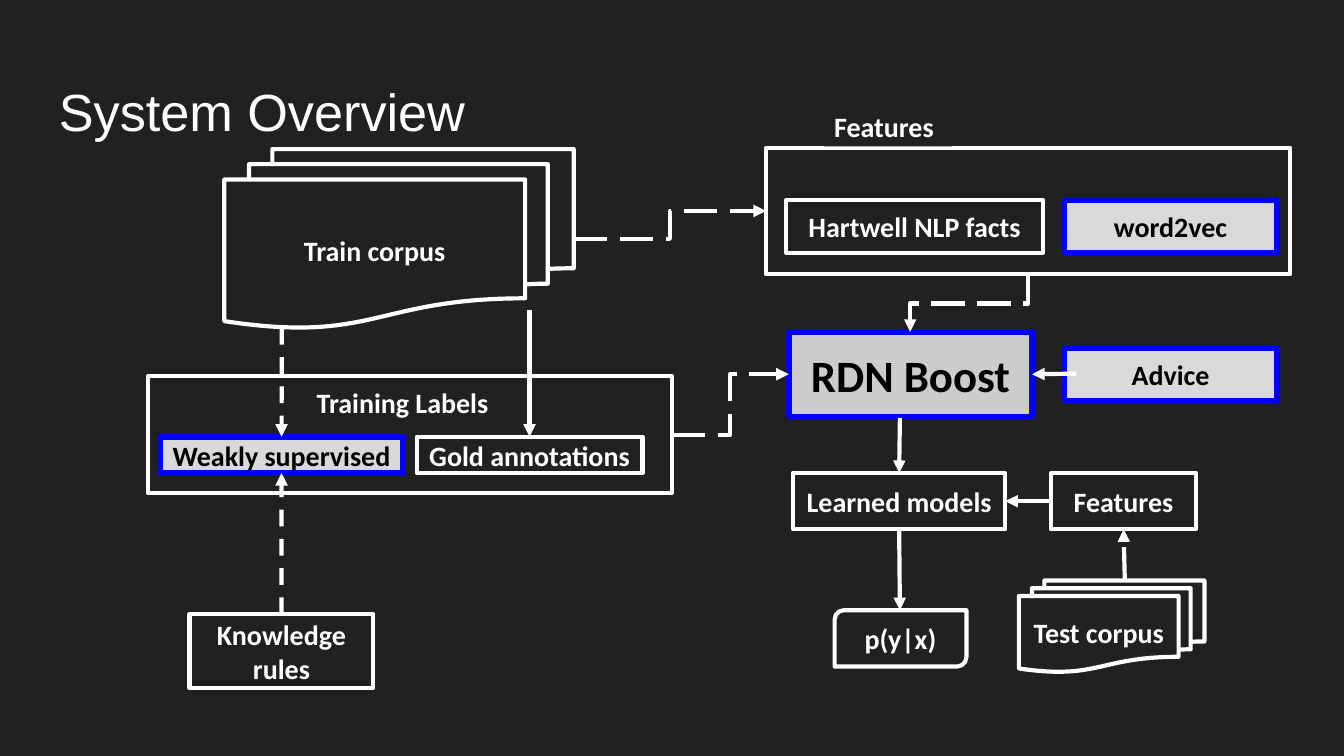
from dataclasses import dataclass

from lxml import etree
from pptx import Presentation
from pptx import util as u
from pptx.dml.color import RGBColor
from pptx.enum import dml, shapes, text
from pptx.oxml.ns import qn

TOP, LEFT, BOTTOM, RIGHT = range(4)
DASH = dml.MSO_LINE.DASH
LONG = dml.MSO_LINE.LONG_DASH
SHAPE = shapes.MSO_SHAPE
ALIGN = text.PP_ALIGN


@dataclass(frozen=True)
class Theme:
    back: str = "212121"
    white: str = "FFFFFF"
    black: str = "000000"
    blue: str = "0000FF"
    light: str = "D9D9D9"
    grey: str = "CCCCCC"
    body: str = "Calibri"
    head: str = "Arial"
    title_size: float = 28
    big_size: float = 24
    size: float = 15
    thin: float = 2.25
    thick: float = 3


class Diagram:
    def __init__(self, theme, width, height):
        self.t = theme
        self.prs = Presentation()
        self.prs.slide_width, self.prs.slide_height = u.Pt(width), u.Pt(height)
        self.s = self.prs.slides.add_slide(self.prs.slide_layouts[6])
        self.paint(self.s.background.fill, theme.back)

    def paint(self, fill, color):
        fill.solid()
        fill.fore_color.rgb = RGBColor.from_string(color)

    def add_text(self, sp, words, insets, anchor, align, color, **font):
        tf = sp.text_frame
        dx, dy = (u.Pt(v) for v in insets)
        frame = dict(word_wrap=True, vertical_anchor=anchor, margin_left=dx,
                     margin_right=dx, margin_top=dy, margin_bottom=dy)
        for name, value in frame.items():
            setattr(tf, name, value)
        p = tf.paragraphs[0]
        p.alignment = align
        r = p.add_run()
        r.text = words
        for name, value in font.items():
            setattr(r.font, name, value)
        r.font.color.rgb = RGBColor.from_string(color)

    def title(self, words, *box):
        sp = self.s.shapes.add_textbox(*map(u.Pt, box))
        self.add_text(sp, words, (7.2, 7.2), text.MSO_ANCHOR.TOP, ALIGN.LEFT,
                      self.t.white, name=self.t.head, size=u.Pt(self.t.title_size))

    def box(self, words, *box, kind=SHAPE.RECTANGLE, fill=None, line=None,
            width=None, color=None, size=None, align=ALIGN.CENTER, outlined=True):
        sp = self.s.shapes.add_shape(kind, *map(u.Pt, box))
        sp.shadow.inherit = False
        if fill:
            self.paint(sp.fill, fill)
        else:
            sp.fill.background()
        if outlined:
            self.paint(sp.line.fill, line or self.t.white)
            sp.line.width = u.Pt(width or self.t.thin)
        else:
            sp.line.fill.background()
        if words:
            self.add_text(sp, words, (5.4, 2.7), text.MSO_ANCHOR.MIDDLE, align,
                          color or self.t.white, name=self.t.body,
                          size=u.Pt(size or self.t.size), bold=True)
        return sp

    def accent(self, words, *box, fill=None, size=None):
        return self.box(words, *box, fill=fill or self.t.light, line=self.t.blue,
                        width=self.t.thick, color=self.t.black, size=size)

    def label(self, words, *box):
        return self.box(words, *box, fill=self.t.back, align=ALIGN.LEFT, outlined=False)

    def arrow(self, start, end, dash=None, kind=shapes.MSO_CONNECTOR.STRAIGHT):
        points = [(0, 0) if hasattr(e[0], "shape_id") else e for e in (start, end)]
        c = self.s.shapes.add_connector(kind, *(u.Pt(v) for pt in points for v in pt))
        for site, join in ((start, c.begin_connect), (end, c.end_connect)):
            if hasattr(site[0], "shape_id"):
                join(*site)
        self.paint(c.line.fill, self.t.white)
        c.line.width = u.Pt(self.t.thin)
        if dash:
            c.line.dash_style = dash
        props = c._element.spPr
        etree.SubElement(props.find(qn("a:ln")), qn("a:tailEnd"), type="triangle")
        etree.SubElement(props, qn("a:effectLst"))
        return c

    def elbow(self, start, end):
        return self.arrow(start, end, LONG, shapes.MSO_CONNECTOR.ELBOW)

    def elbow_down(self, start, end):
        (x1, y1), (x2, y2) = start, end
        cx, cy = (x1 + x2) / 2, (y1 + y2) / 2
        half_w, half_h = (y2 - y1) / 2, (x1 - x2) / 2
        c = self.elbow((cx - half_w, cy - half_h), (cx + half_w, cy + half_h))
        c._element.spPr.find(qn("a:xfrm")).set("rot", "5400000")


def main():
    t = Theme()
    d = Diagram(t, 720, 405)

    labels = d.box("", 79.2, 201.6, 280.8, 62.6)
    features = d.box("", 410.4, 79.2, 280.8, 67.7)
    d.label("Training Labels", 164.2, 203.8, 121, 23.8)
    d.label("Features", 441.4, 56.9, 68.4, 21.6)
    d.box("Hartwell NLP facts", 421.2, 107.3, 137.5, 28.1)
    d.accent("word2vec", 570.2, 107.3, 113.8, 28.1)
    d.accent("Advice", 570.2, 186.5, 113.8, 28.1)
    weak = d.accent("Weakly supervised", 85.7, 234, 130.3, 19.4)
    gold = d.box("Gold annotations", 223.2, 234, 121, 19.4)
    boost = d.accent("RDN Boost", 422.6, 177.8, 130.3, 45.4, fill=t.grey, size=t.big_size)
    learned = d.box("Learned models", 424.8, 253.4, 113.8, 30.2)
    test_features = d.box("Features", 563, 253.4, 77.8, 30.2)
    rules = d.box("Knowledge rules", 101.5, 329, 98.6, 39.6)
    d.box("Train corpus", 120.2, 79.9, 187.2, 95.8, kind=SHAPE.FLOWCHART_MULTIDOCUMENT)
    d.box("Test corpus", 545.8, 311, 99.4, 49, kind=SHAPE.FLOWCHART_MULTIDOCUMENT)
    d.box("p(y|x)", 447.1, 326.9, 70.6, 30.2, kind=SHAPE.ROUND_2_DIAG_RECTANGLE)

    d.arrow((151, 175.7), (weak, TOP), DASH)
    d.arrow((rules, TOP), (weak, BOTTOM), DASH)
    d.arrow((283.7, 166.3), (gold, TOP))
    d.arrow((482.1, 223.9), (learned, TOP))
    d.arrow((learned, BOTTOM), (482.1, 326.9))
    d.arrow((602.6, 311), (test_features, BOTTOM), LONG)
    d.arrow((test_features, LEFT), (learned, RIGHT), LONG)
    d.arrow((576.7, 200.2), (boost, RIGHT), LONG)
    d.elbow((labels, RIGHT), (boost, LEFT))
    d.elbow((307.4, 128), (features, LEFT))
    d.elbow_down((550.8, 147.4), (487.6, 177.8))
    d.title("System Overview", 24.5, 35.3, 671, 45.4)
    d.prs.save("out.pptx")


if __name__ == "__main__":
    main()
